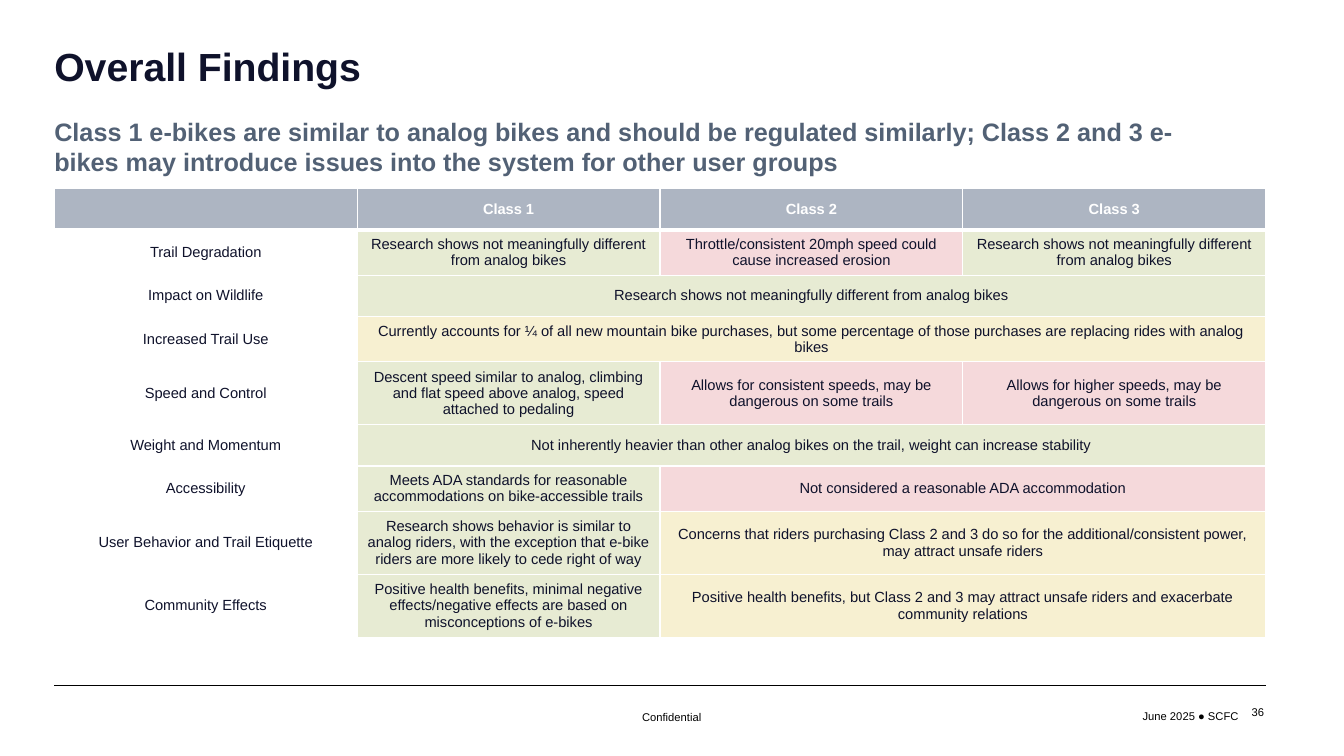
from lxml.etree import SubElement
from pptx import Presentation
from pptx.dml.color import RGBColor
from pptx.enum.shapes import MSO_CONNECTOR
from pptx.enum.text import MSO_ANCHOR, PP_ALIGN
from pptx.oxml.ns import qn
from pptx.util import Cm, Pt

COLORS = {
    "ink": "0F122B",
    "slate": "526175",
    "black": "000000",
    "white": "FFFFFF",
    "header": "ADB5C2",
    "good": "E7EBD3",
    "caution": "F7F0D1",
    "concern": "F5D9DB",
}
LEFT, WIDTH = 1.37, 30.53
COLUMNS = 4
ROW_HEIGHT = 1.04
SIMILAR = "Research shows not meaningfully different from analog bikes"

# Each finding: topic, then (rating, wording, columns covered)
FINDINGS = [
    ("Trail Degradation", [
        ("good", SIMILAR, 1),
        ("concern", "Throttle/consistent 20mph speed could cause increased erosion", 1),
        ("good", SIMILAR, 1)]),
    ("Impact on Wildlife", [("good", SIMILAR, 3)]),
    ("Increased Trail Use", [
        ("caution", "Currently accounts for ¼ of all new mountain bike purchases, but some "
         "percentage of those purchases are replacing rides with analog bikes", 3)]),
    ("Speed and Control", [
        ("good", "Descent speed similar to analog, climbing and flat speed above analog, "
         "speed attached to pedaling", 1),
        ("concern", "Allows for consistent speeds, may be dangerous on some trails", 1),
        ("concern", "Allows for higher speeds, may be dangerous on some trails", 1)]),
    ("Weight and Momentum", [
        ("good", "Not inherently heavier than other analog bikes on the trail, "
         "weight can increase stability", 3)]),
    ("Accessibility", [
        ("good", "Meets ADA standards for reasonable accommodations on "
         "bike-accessible trails", 1),
        ("concern", "Not considered a reasonable ADA accommodation", 2)]),
    ("User Behavior and Trail Etiquette", [
        ("good", "Research shows behavior is similar to analog riders, with the exception "
         "that e-bike riders are more likely to cede right of way", 1),
        ("caution", "Concerns that riders purchasing Class 2 and 3 do so for the "
         "additional/consistent power, may attract unsafe riders", 2)]),
    ("Community Effects", [
        ("good", "Positive health benefits, minimal negative effects/negative effects are "
         "based on misconceptions of e-bikes", 1),
        ("caution", "Positive health benefits, but Class 2 and 3 may attract unsafe riders "
         "and exacerbate community relations", 2)]),
]


def rgb(name):
    return RGBColor.from_string(COLORS[name])


def write(frame, wording, size, color, bold=False, align=PP_ALIGN.LEFT):
    paragraph = frame.paragraphs[0]
    paragraph.alignment = align
    run = paragraph.add_run()
    run.text = wording
    run.font.name = "Arial"
    run.font.size = Pt(size)
    run.font.bold = bold
    run.font.color.rgb = rgb(color)


def add_text(slide, box, wording, size, color, bold=False, align=PP_ALIGN.LEFT,
             anchor=MSO_ANCHOR.TOP, side=0.25, edge=0.13, wrap=True):
    """Place text in a box, with side and edge as its insets in cm."""
    frame = slide.shapes.add_textbox(*map(Cm, box)).text_frame
    frame.word_wrap = wrap
    frame.vertical_anchor = anchor
    frame.margin_left = frame.margin_right = Cm(side)
    frame.margin_top = frame.margin_bottom = Cm(edge)
    write(frame, wording, size, color, bold, align)


def add_heading(slide, left, top, width):
    add_text(slide, (left, top, width, 1.6), "Overall Findings", 28, "ink",
             bold=True, side=0, edge=0)
    add_text(slide, (left, top + 2.11, width - 1.17, 1.02),
             "Class 1 e-bikes are similar to analog bikes and should be regulated similarly; "
             "Class 2 and 3 e-bikes may introduce issues into the system for other user groups",
             18, "slate", bold=True, anchor=MSO_ANCHOR.MIDDLE, side=0)


def set_borders(cell, top, bottom):
    """Draw white cell borders; top and bottom are widths in points."""
    properties = cell._tc.get_or_add_tcPr()
    for tag, width in (("a:lnL", 1), ("a:lnR", 1), ("a:lnT", top), ("a:lnB", bottom)):
        border = SubElement(properties, qn(tag), w=str(Pt(width)))
        fill = SubElement(border, qn("a:solidFill"))
        SubElement(fill, qn("a:srgbClr"), val=COLORS["white"])


def fill_cell(cell, wording, fill, color="ink", bold=False):
    cell.fill.solid()
    cell.fill.fore_color.rgb = rgb(fill)
    cell.vertical_anchor = MSO_ANCHOR.MIDDLE
    if wording:
        write(cell.text_frame, wording, 10.5, color, bold, PP_ALIGN.CENTER)


def add_findings(slide, left, top, width):
    rows = len(FINDINGS) + 1
    table = slide.shapes.add_table(rows, COLUMNS, Cm(left), Cm(top), Cm(width),
                                   Cm(ROW_HEIGHT * rows)).table
    table.horz_banding = False
    for row_number, row in enumerate(table.rows):
        row.height = Cm(ROW_HEIGHT)
        for cell in row.cells:
            set_borders(cell, 3 if row_number == 1 else 1, 3 if row_number == 0 else 1)

    for column, heading in enumerate(["", "Class 1", "Class 2", "Class 3"]):
        fill_cell(table.cell(0, column), heading, "header", "white", bold=True)
    for row, (topic, ratings) in enumerate(FINDINGS, 1):
        fill_cell(table.cell(row, 0), topic, "white")
        column = 1
        for rating, wording, span in ratings:
            cell = table.cell(row, column)
            if span > 1:
                cell.merge(table.cell(row, column + span - 1))
            fill_cell(cell, wording, rating)
            column += span


def add_footer(slide, left, top, width):
    rule = slide.shapes.add_connector(MSO_CONNECTOR.STRAIGHT, Cm(left), Cm(top),
                                      Cm(left + width), Cm(top))
    rule.line.color.rgb = rgb("black")
    rule.line.width = Pt(1)
    SubElement(rule._element.spPr, qn("a:effectLst"))
    right = left + width
    add_text(slide, (right - 3.48, top + 0.48, 3.05, 0.61), "June 2025 ● SCFC", 8, "black",
             align=PP_ALIGN.RIGHT, wrap=False)
    add_text(slide, (left + 14.56, top + 0.51, 2.03, 0.61), "Confidential", 8, "black",
             wrap=False)
    add_text(slide, (right - 5.79, top + 0.25, 6, 0.84), "36", 8, "black",
             align=PP_ALIGN.RIGHT, anchor=MSO_ANCHOR.MIDDLE)


def main():
    deck = Presentation()
    deck.slide_width, deck.slide_height = Cm(33.87), Cm(19.05)
    slide = deck.slides.add_slide(deck.slide_layouts[6])
    add_heading(slide, LEFT, 1.07, WIDTH)
    add_findings(slide, LEFT, 4.75, WIDTH)
    add_footer(slide, LEFT, 17.27, WIDTH)
    deck.save("out.pptx")


if __name__ == "__main__":
    main()
